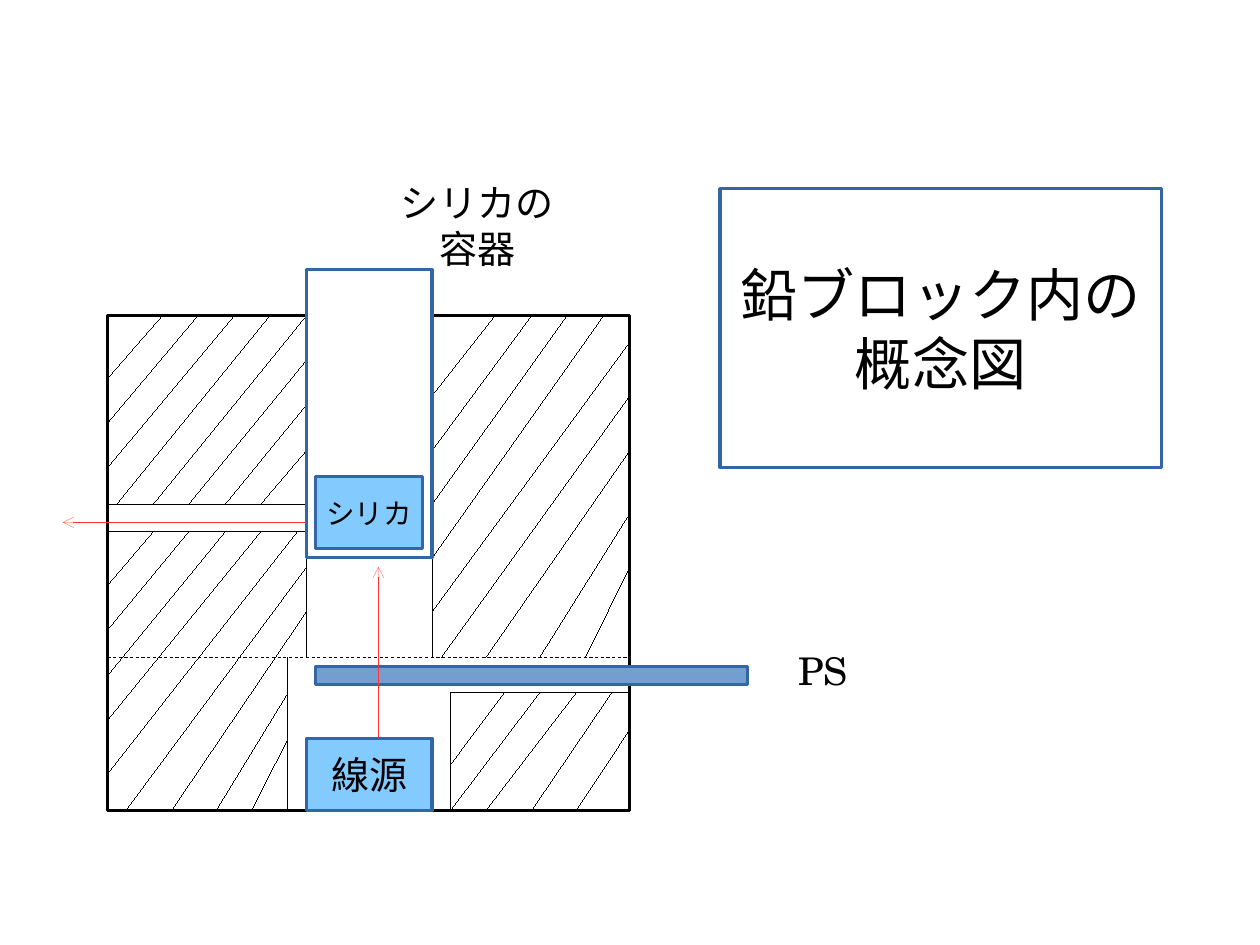
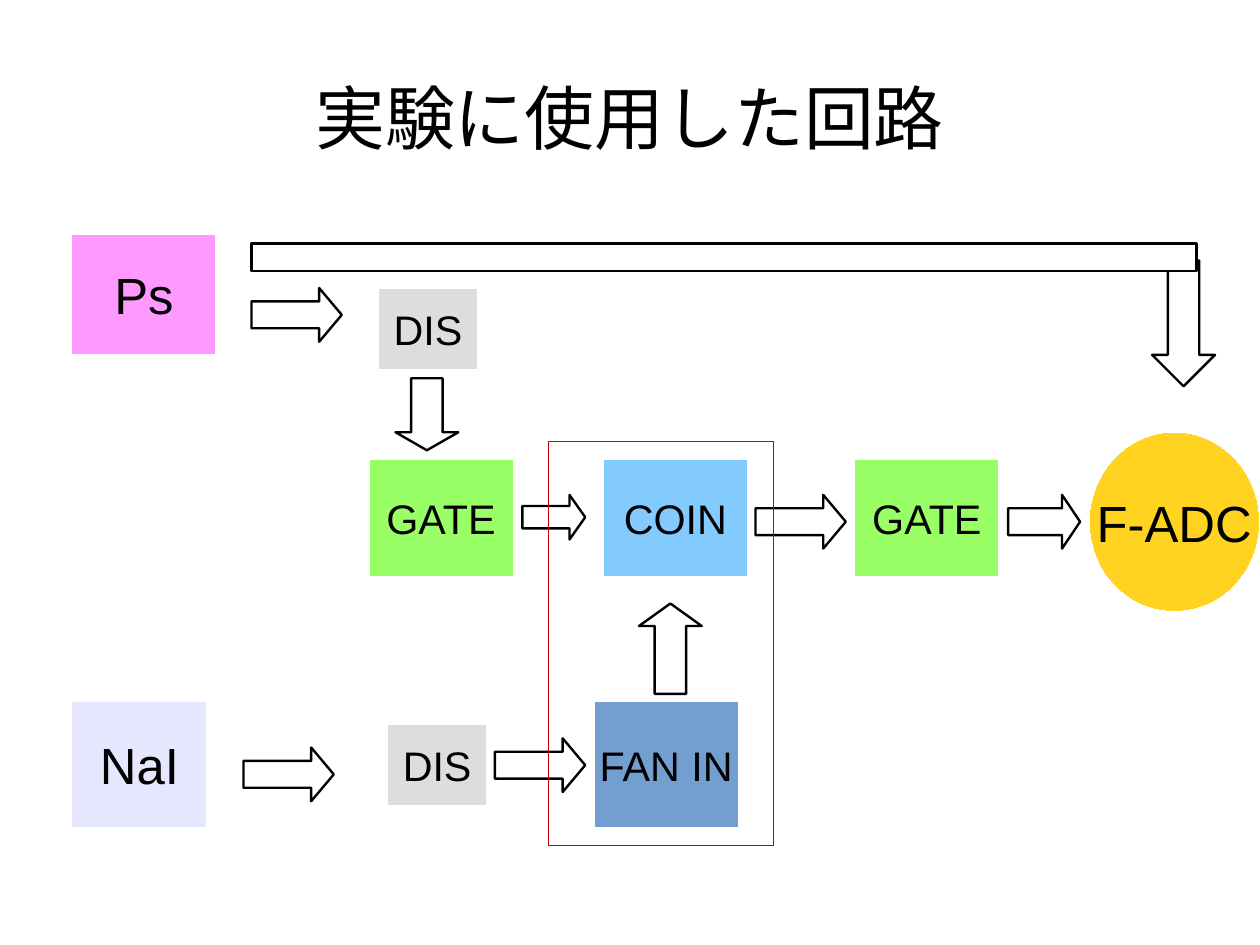
from lxml.etree import SubElement
from pptx import Presentation
from pptx.dml.color import RGBColor
from pptx.enum.dml import MSO_LINE
from pptx.enum.shapes import MSO_CONNECTOR, MSO_SHAPE
from pptx.enum.text import MSO_ANCHOR, MSO_AUTO_SIZE, PP_ALIGN
from pptx.oxml.ns import qn
from pptx.util import Inches, Pt

COLORS = {
    "black": "000000", "white": "FFFFFF", "edge": "3465A4", "steel": "729FCF",
    "sky": "83CAFF", "ray": "FF3333", "frame": "C5000B", "lavender": "E6E6FF",
    "pink": "FF99FF", "yellow": "FFD320", "green": "99FF66", "gray": "DDDDDD",
}
SERIF, SANS = "TeX Gyre Schola", "Arial"
TITLE_ONLY = 5
MM_PER_INCH = 25.4


def rgb(name):
    return RGBColor.from_string(COLORS[name])


class Deck:
    def __init__(self, width_mm, height_mm):
        self.prs = Presentation()
        self.prs.slide_width = Inches(width_mm / MM_PER_INCH)
        self.prs.slide_height = Inches(height_mm / MM_PER_INCH)
        self.s = None
        self.font = SANS

    def slide(self, font):
        self.s = self.prs.slides.add_slide(self.prs.slide_layouts[TITLE_ONLY])
        self.font = font

    def text(self, sp, lines, size, wrap=False):
        tf = sp.text_frame
        tf.auto_size = MSO_AUTO_SIZE.NONE
        tf.word_wrap = wrap
        tf.vertical_anchor = MSO_ANCHOR.MIDDLE
        tf.margin_left = tf.margin_right = tf.margin_top = tf.margin_bottom = 0
        for i, line in enumerate(lines):
            p = tf.add_paragraph() if i else tf.paragraphs[0]
            p.alignment = PP_ALIGN.CENTER
            r = p.add_run()
            r.text = line
            r.font.size = Pt(size)
            r.font.name = self.font
            r.font.color.rgb = rgb("black")

    def stroke(self, sp, color, weight):
        sp.line.color.rgb = rgb(color)
        ln = sp._element.spPr.find(qn("a:ln"))
        ln.set("w", str(int(Pt(weight))))
        return ln

    def paint(self, sp, fill, line, weight):
        if fill:
            sp.fill.solid()
            sp.fill.fore_color.rgb = rgb(fill)
        else:
            sp.fill.background()
        if line:
            self.stroke(sp, line, weight)
        else:
            sp.line.fill.background()

    def title(self, box, lines, size, fill=None, line=None):
        sp = self.s.shapes.title
        sp.left, sp.top, sp.width, sp.height = [Inches(v) for v in box]
        self.paint(sp, fill, line, 2)
        self.text(sp, lines, size, True)

    def shape(self, box, fill=None, line=None, weight=2, lines=(), size=24,
              kind=MSO_SHAPE.RECTANGLE):
        sp = self.s.shapes.add_shape(kind, *[Inches(v) for v in box])
        sp.shadow.inherit = False
        self.paint(sp, fill, line, weight)
        if lines:
            self.text(sp, lines, size)
        return sp

    def label(self, box, lines, size):
        sp = self.s.shapes.add_textbox(*[Inches(v) for v in box])
        self.text(sp, lines, size)

    def block_arrow(self, kind, box):
        sp = self.shape(box, "white", "black", 1.5, kind=kind)
        width, height = box[2:]
        length = width if kind == MSO_SHAPE.RIGHT_ARROW else height
        sp.adjustments[0] = 0.5
        sp.adjustments[1] = length / 4 / min(width, height)

    def line(self, start, end, color="black", arrow=False, dashed=False):
        c = self.s.shapes.add_connector(
            MSO_CONNECTOR.STRAIGHT, *[Inches(v) for v in (*start, *end)])
        ln = self.stroke(c, color, 0.5 if dashed else 0)
        if dashed:
            c.line.dash_style = MSO_LINE.DASH
        if arrow:
            SubElement(ln, qn("a:tailEnd"), type="arrow")
        SubElement(c._element.spPr, qn("a:effectLst"))

    def hatch(self, region, tops, rights, lefts, bottoms):
        left, top, right, bottom = region
        starts = [(x, top) for x in tops] + [(right, y) for y in rights]
        ends = [(left, y) for y in lefts] + [(x, bottom) for x in bottoms]
        for start, end in zip(starts, ends):
            self.line(start, end)


def lead_block(deck):
    deck.slide(SERIF)
    deck.title((6.3, 1.65, 3.86, 2.44), ["鉛ブロック内の", "概念図"], 36, "white", "edge")
    deck.label((3.31, 1.42, 1.73, 1.1), ["シリカの", "容器"], 24)
    left, top, right, bottom = 0.94, 2.76, 5.51, 7.09
    bore_left, bore_right, seam = 2.68, 3.78, 5.75
    slit_top, slit_bottom = 4.41, 4.65
    well_left, well_right, ledge = 2.52, 3.94, 6.06
    deck.shape((left, top, right - left, bottom - top), "white", "black")
    deck.line((left, seam), (right, seam), dashed=True)
    for start, end in [
        ((bore_left, slit_top), (bore_left, top)),
        ((bore_right, seam), (bore_right, top)),
        ((well_right, ledge), (right, ledge)),
        ((well_right, ledge), (well_right, bottom)),
        ((well_left, seam), (well_left, bottom)),
        ((bore_left, slit_top), (left, slit_top)),
        ((left, slit_bottom), (bore_left, slit_bottom)),
        ((bore_left, slit_bottom), (bore_left, seam)),
    ]:
        deck.line(start, end)
    deck.hatch((left, top, bore_left, slit_top),
               [1.42, 1.73, 2.05, 2.36, 2.68], [3.15, 3.54, 3.94],
               [3.31, 3.7, 4.09], [1.02, 1.34, 1.65, 1.97, 2.28])
    deck.hatch((bore_right, top, right, seam),
               [4.33, 4.65, 4.96, 5.28], [2.99, 3.46, 3.94, 4.49, 4.96],
               [3.46, 3.94, 4.41, 4.88, 5.35], [3.86, 4.25, 4.72, 5.12])
    deck.hatch((well_right, ledge, right, bottom),
               [4.41, 4.72, 5.04, 5.35], [6.38],
               [6.69, 7.09], [4.25, 4.65, 5.04])
    deck.hatch((left, slit_bottom, bore_left, bottom),
               [1.34, 1.65, 1.97, 2.28, 2.6], [4.96, 5.35],
               [5.12, 5.51, 5.91, 6.3, 6.77], [1.1, 1.5])
    deck.hatch((left, seam, well_left, bottom), [], [6.06, 6.46], [], [1.89, 2.2])
    deck.shape((2.76, 5.83, 3.78, 0.16), "steel", "edge")
    deck.shape((bore_left, 6.46, 1.1, 0.63), "sky", "edge", lines=["線源"])
    deck.shape((bore_left, 2.36, 1.1, 2.52), "white", "edge")
    deck.line((bore_left, 4.57), (0.55, 4.57), "ray", arrow=True)
    deck.shape((2.76, 4.17, 0.94, 0.63), "sky", "edge", lines=["シリカ"], size=18)
    deck.label((6.61, 5.51, 1.18, 0.71), ["PS"], 24)
    deck.line((3.31, 6.46), (3.31, 4.96), "ray", arrow=True)


def circuit(deck):
    deck.slide(SANS)
    deck.title((0.55, 0.33, 9.92, 1.38), ["実験に使用した回路"], 44)
    for name, box, fill, size in [
        ("NaI", (0.63, 6.14, 1.18, 1.1), "lavender", 32),
        ("Ps", (0.63, 2.05, 1.26, 1.05), "pink", 32),
        ("FAN IN", (5.2, 6.14, 1.26, 1.1), "steel", 26),
        ("COIN", (5.28, 4.02, 1.26, 1.02), "sky", 26),
        ("GATE", (7.48, 4.02, 1.26, 1.02), "green", 26),
        ("GATE", (3.23, 4.02, 1.26, 1.02), "green", 26),
        ("DIS", (3.31, 2.52, 0.87, 0.71), "gray", 26),
        ("DIS", (3.39, 6.34, 0.87, 0.71), "gray", 26),
    ]:
        deck.shape(box, fill, "white", 0, [name], size)
    deck.shape((9.53, 3.78, 1.49, 1.57), "yellow", "white", 0, ["F-ADC"], 32,
               MSO_SHAPE.OVAL)
    for box in [
        (2.2, 2.52, 0.79, 0.47), (2.13, 6.54, 0.79, 0.47),
        (4.57, 4.33, 0.55, 0.39), (4.33, 6.46, 0.79, 0.47),
        (6.61, 4.33, 0.79, 0.47), (8.82, 4.33, 0.63, 0.47),
    ]:
        deck.block_arrow(MSO_SHAPE.RIGHT_ARROW, box)
    deck.block_arrow(MSO_SHAPE.UP_ARROW, (5.59, 5.28, 0.55, 0.79))
    for box in [(3.46, 3.31, 0.55, 0.63), (10.08, 2.28, 0.55, 1.1)]:
        deck.block_arrow(MSO_SHAPE.DOWN_ARROW, box)
    deck.shape((2.2, 2.13, 8.27, 0.24), "white", "black", 1.5)
    left, top, right, bottom = 4.8, 3.86, 6.77, 7.4
    for start, end in [
        ((right, bottom), (right, top)), ((left, top), (right, top)),
        ((left, top), (left, bottom)), ((left, bottom), (right, bottom)),
    ]:
        deck.line(start, end, "frame")


def main():
    deck = Deck(280, 210)
    lead_block(deck)
    circuit(deck)
    deck.prs.save("out.pptx")


if __name__ == "__main__":
    main()
